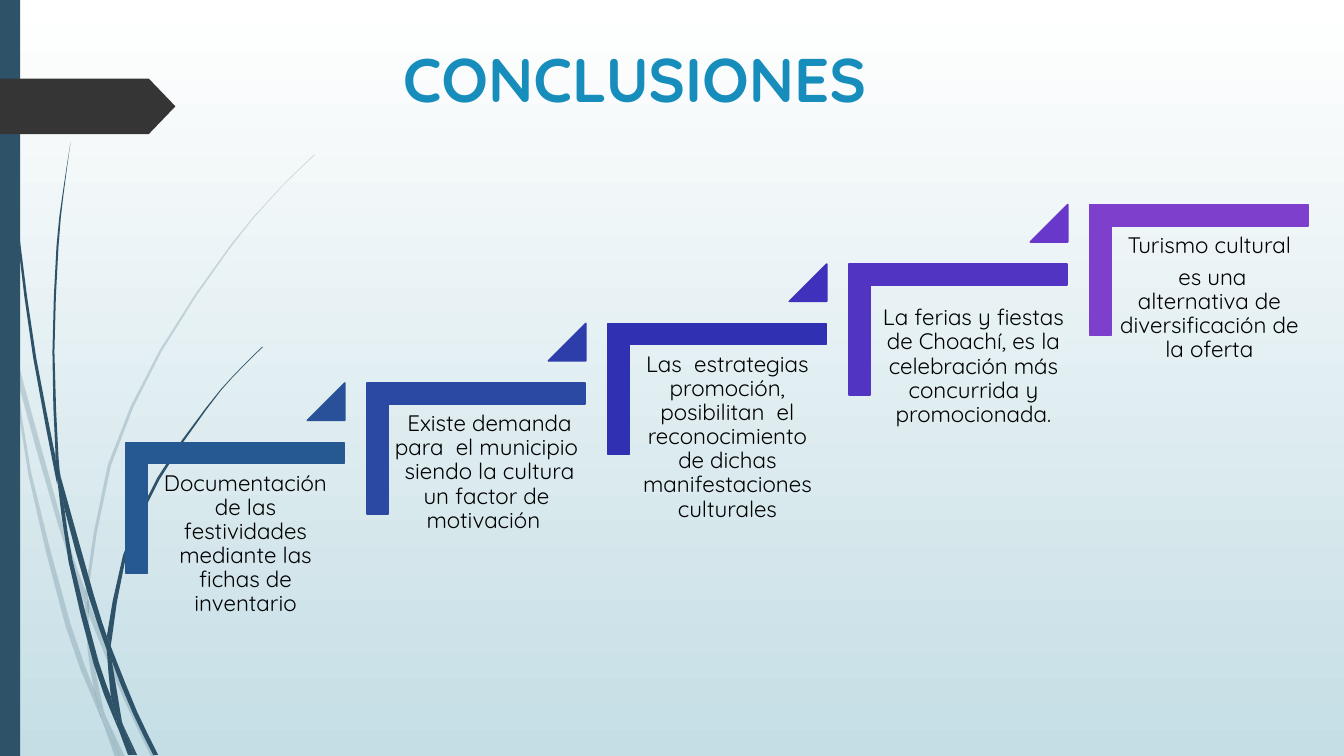
"""Build the slide of conclusions arranged as a rising staircase."""
from lxml.etree import SubElement
from pptx import Presentation
from pptx.dml.color import RGBColor
from pptx.enum.shapes import MSO_SHAPE as Preset
from pptx.enum.text import MSO_ANCHOR as Anchor, PP_ALIGN as Align
from pptx.oxml.ns import qn
from pptx.util import Inches, Pt

WHITE = RGBColor(0xFF, 0xFF, 0xFF)
MIST = RGBColor(0xC5, 0xDE, 0xE5)
SLATE = RGBColor(0x2E, 0x53, 0x69)
CHARCOAL = RGBColor(0x35, 0x35, 0x35)
BLACK = RGBColor(0x00, 0x00, 0x00)
CYAN = RGBColor(0x17, 0x8D, 0xBB)
STEP_COLORS = [RGBColor.from_string(code) for code in
               ("265991", "2B48A2", "2F31B2", "5234C3", "7E40CC")]
TRIANGLE_COLORS = [RGBColor.from_string(code) for code in
                   ("285199", "2D3DAA", "3F31BB", "6838CA")]

TITLE_FONT = {"name": "Quicksand", "size": Pt(44), "bold": True}
BODY_FONT = {"name": "Quicksand", "size": Pt(16)}
BODY_SPACING = {"alignment": Align.CENTER, "line_spacing": 0.9, "space_after": Pt(5.6)}
BODY_FRAME = {"word_wrap": True, "vertical_anchor": Anchor.TOP,
              "margin_left": Inches(0.07), "margin_right": Inches(0.07),
              "margin_top": Inches(0.07), "margin_bottom": Inches(0.07)}

STEP_LEFT, STEP_TOP = 1.68, 3.96
STEP_RUN, STEP_RISE = 2.39, 0.59
USUAL_OFFSET = (-0.23, 0.65)
CONCLUSIONS = [
    (["Documentación de las festividades mediante las fichas de inventario"], USUAL_OFFSET),
    ([" Existe demanda para  el municipio  siendo la cultura un factor de motivación "],
     USUAL_OFFSET),
    (["Las  estrategias promoción, posibilitan  el reconocimiento de dichas "
      "manifestaciones culturales"], USUAL_OFFSET),
    (["La ferias y fiestas de Choachí, es la celebración más concurrida y promocionada."],
     (-0.18, 0.78)),
    (["Turismo cultural", " es una alternativa de diversificación de la oferta"],
     USUAL_OFFSET),
]

PALE_BLADES = [
    ([(0, 2.99), (0.1, 3.44), (0.11, 3.5)], [(0, 2.82), (0.09, 3.22), (0.11, 3.5)]),
    ([(0.14, 3.45), (0.17, 3.76), (0.58, 5.22), (0.84, 5.99)],
     [(0.14, 3.45), (0.62, 5.2), (0.85, 5.86)]),
    ([(0.88, 5.96), (0.88, 6.1), (1.23, 6.94), (1.5, 7.51)],
     [(0.88, 5.96), (0.92, 6.07), (1.27, 6.92), (1.55, 7.51)]),
    ([(1.05, 7.11), (1.19, 7.51)], [(1.05, 7.11), (1.24, 7.51)]),
    ([(0.11, 3.5), (0.28, 4.7), (0.65, 6.21), (0.92, 6.93), (1.01, 7.14)],
     [(0.11, 3.5), (0.17, 3.76), (0.31, 4.69), (0.7, 6.19), (0.93, 6.83), (0.99, 7.07)]),
    ([(0.84, 5.99), (0.87, 6.46), (0.93, 6.83), (0.96, 6.92), (1.05, 7.11)],
     [(0.84, 5.99), (0.88, 6.08), (0.88, 6.1), (0.91, 6.46), (1.03, 7.06)]),
    ([(3.12, 1.53), (2.89, 1.75), (2.68, 1.97), (2.28, 2.44), (1.58, 3.48), (1.07, 4.61),
      (0.85, 5.84), (0.85, 5.86)],
     [(3.12, 1.54), (2.9, 1.75), (2.68, 1.98), (2.29, 2.45), (1.6, 3.49), (1.1, 4.62),
      (0.88, 5.84), (0.88, 5.96)]),
    ([(1.01, 7.14), (1.14, 7.51)], [(1.01, 7.14), (1.19, 7.51)]),
    ([(0.85, 5.86), (0.84, 5.99), (0.88, 6.08)], [(0.85, 5.86), (0.88, 5.96), (0.88, 6.1)]),
    ([(0.93, 6.83), (0.99, 7.07), (1.01, 7.14), (1.19, 7.51)],
     [(0.93, 6.83), (0.96, 6.92), (1.05, 7.11), (1.19, 7.51)]),
]
DARK_BLADES = [
    ([(0.03, 0), (0.04, 0.48), (0.07, 1.1), (0.17, 2.33), (0.33, 3.55), (0.56, 4.77)],
     [(0.04, 0), (0.05, 0.48), (0.08, 1.09), (0.19, 2.32), (0.36, 3.55), (0.55, 4.53),
      (0.57, 4.81)]),
    ([(0.6, 4.72), (0.64, 5.05), (0.88, 5.92), (1.06, 6.45)],
     [(0.6, 4.72), (0.93, 5.9), (1.06, 6.31)]),
    ([(1.1, 6.41), (1.11, 6.56), (1.32, 7.08), (1.52, 7.49)],
     [(1.1, 6.41), (1.13, 6.49), (1.36, 7.06), (1.57, 7.49)]),
    ([(0.57, 4.77), (0.68, 5.57), (0.93, 6.59), (1.11, 7.08), (1.17, 7.22)],
     [(0.57, 4.77), (0.64, 5.05), (0.72, 5.56), (0.98, 6.57), (1.1, 6.91), (1.16, 7.17)]),
    ([(0.7, 1.41), (0.62, 1.93), (0.56, 2.45), (0.52, 3.49), (0.55, 4.49), (0.6, 4.72)],
     [(0.7, 1.41), (0.63, 1.93), (0.58, 2.45), (0.54, 3.49), (0.58, 4.53), (0.6, 4.72)]),
    ([(1.22, 7.19), (1.33, 7.49)], [(1.22, 7.19), (1.36, 7.49)]),
    ([(0.55, 4.49), (0.55, 4.53), (0.57, 4.77), (0.64, 5.05)], [(0.55, 4.49), (0.6, 4.72)]),
    ([(2.6, 3.44), (2.31, 3.73), (2.04, 4.05), (1.56, 4.74), (1.22, 5.51), (1.06, 6.31)],
     [(2.61, 3.44), (2.31, 3.74), (2.05, 4.06), (1.58, 4.76), (1.25, 5.52), (1.11, 6.33),
      (1.1, 6.41)]),
    ([(1.17, 7.22), (1.27, 7.49)], [(1.17, 7.22), (1.31, 7.49)]),
    ([(1.06, 6.45), (1.1, 6.91), (1.16, 7.06), (1.22, 7.19)],
     [(1.06, 6.45), (1.09, 6.51), (1.11, 6.56), (1.21, 7.16)]),
    ([(1.06, 6.31), (1.06, 6.45), (1.11, 6.56)], [(1.06, 6.31), (1.1, 6.41)]),
    ([(1.1, 6.91), (1.16, 7.17), (1.17, 7.22), (1.3, 7.49)],
     [(1.1, 6.91), (1.16, 7.06), (1.22, 7.19), (1.33, 7.49)]),
]


def apply_format(target, values):
    """Set every attribute named in values on the target."""
    for name, value in values.items():
        setattr(target, name, value)


def paint(shape, color, line_width=None):
    """Give a shape a flat fill, no shadow and an optional matching outline."""
    shape.shadow.inherit = False
    shape.fill.solid()
    shape.fill.fore_color.rgb = color
    if line_width is None:
        shape.line.fill.background()
    else:
        shape.line.color.rgb = color
        shape.line.width = line_width


def add_preset(slide, preset, place, color, adjustments=(), line_width=None):
    """Add a painted preset shape at a place given in inches."""
    shape = slide.shapes.add_shape(preset, *map(Inches, place))
    for index, value in enumerate(adjustments):
        shape.adjustments[index] = value
    paint(shape, color, line_width)
    return shape


def smooth_edge(points):
    """Return the points with a Catmull-Rom midpoint between each pair."""
    padded = [points[0], *points, points[-1]]
    curve = [points[0]]
    for before, start, end, after in zip(padded, padded[1:], padded[2:], padded[3:]):
        middle = tuple((9 * (b + c) - a - d) / 16
                       for a, b, c, d in zip(before, start, end, after))
        curve += [middle, end]
    return curve


def add_blade(slide, left_edge, right_edge, opacity=100):
    """Add a piece of a grass blade bounded by two smooth edges."""
    outline = smooth_edge(left_edge) + smooth_edge(right_edge)[::-1]
    points = [(Inches(x), Inches(y)) for x, y in outline]
    builder = slide.shapes.build_freeform(*points[0])
    builder.add_line_segments(points[1:], close=True)
    blade = builder.convert_to_shape()
    paint(blade, SLATE)
    if opacity < 100:
        color = blade.element.spPr.find(qn("a:solidFill")).find(qn("a:srgbClr"))
        SubElement(color, qn("a:alpha")).set("val", str(opacity * 1000))


def add_text(slide, paragraphs, place):
    """Add a wrapped text box with centred body paragraphs."""
    frame = slide.shapes.add_textbox(*map(Inches, place)).text_frame
    apply_format(frame, BODY_FRAME)
    for index, text in enumerate(paragraphs):
        para = frame.add_paragraph() if index else frame.paragraphs[0]
        apply_format(para, BODY_SPACING)
        span = para.add_run()
        span.text = text
        apply_format(span.font, BODY_FONT)
        span.font.color.rgb = BLACK


def set_background(slide):
    """Fill the background with a vertical gradient."""
    fill = slide.background.fill
    fill.gradient()
    fill.gradient_angle = 270
    for stop, color, position in zip(fill.gradient_stops, (WHITE, MIST), (0, 1)):
        apply_format(stop, {"position": position})
        stop.color.rgb = color


def set_title(slide, text):
    """Place and format the title placeholder."""
    title = slide.shapes.title
    apply_format(title, {"left": Inches(1.42), "top": Inches(0.36),
                         "width": Inches(9.75), "height": Inches(1.4)})
    title.text_frame.vertical_anchor = Anchor.TOP
    para = title.text_frame.paragraphs[0]
    para.alignment = Align.CENTER
    span = para.add_run()
    span.text = text
    apply_format(span.font, TITLE_FONT)
    span.font.color.rgb = CYAN


def add_step(slide, index, paragraphs, offset):
    """Add one stair step with its text and the triangle leading to the next step."""
    left, top = STEP_LEFT + index * STEP_RUN, STEP_TOP - index * STEP_RISE
    corner = add_preset(slide, Preset.CORNER, (left, top, 1.3, 2.16),
                        STEP_COLORS[index], (0.161, 0.161), Pt(1.25))
    corner.rotation = 90
    add_text(slide, paragraphs, (left + offset[0], top + offset[1], 1.97, 1.71))
    if index < len(TRIANGLE_COLORS):
        add_preset(slide, Preset.ISOSCELES_TRIANGLE, (left + 1.37, top - 0.16, 0.37, 0.37),
                   TRIANGLE_COLORS[index], (1,), Pt(1.25))


def main():
    """Assemble and save the deck."""
    deck = Presentation()
    deck.slide_width, deck.slide_height = Inches(13.33), Inches(7.5)
    slide = deck.slides.add_slide(deck.slide_layouts[5])
    set_background(slide)
    for blades, opacity in ((PALE_BLADES, 20), (DARK_BLADES, 100)):
        for edges in blades:
            add_blade(slide, *edges, opacity)
    add_preset(slide, Preset.RECTANGLE, (0, 0, 0.2, 7.5), SLATE)
    add_preset(slide, Preset.PENTAGON, (0, 0.78, 1.74, 0.55), CHARCOAL, (0.48,))
    set_title(slide, "CONCLUSIONES")
    for index, (paragraphs, offset) in enumerate(CONCLUSIONS):
        add_step(slide, index, paragraphs, offset)
    deck.save("out.pptx")


if __name__ == "__main__":
    main()
